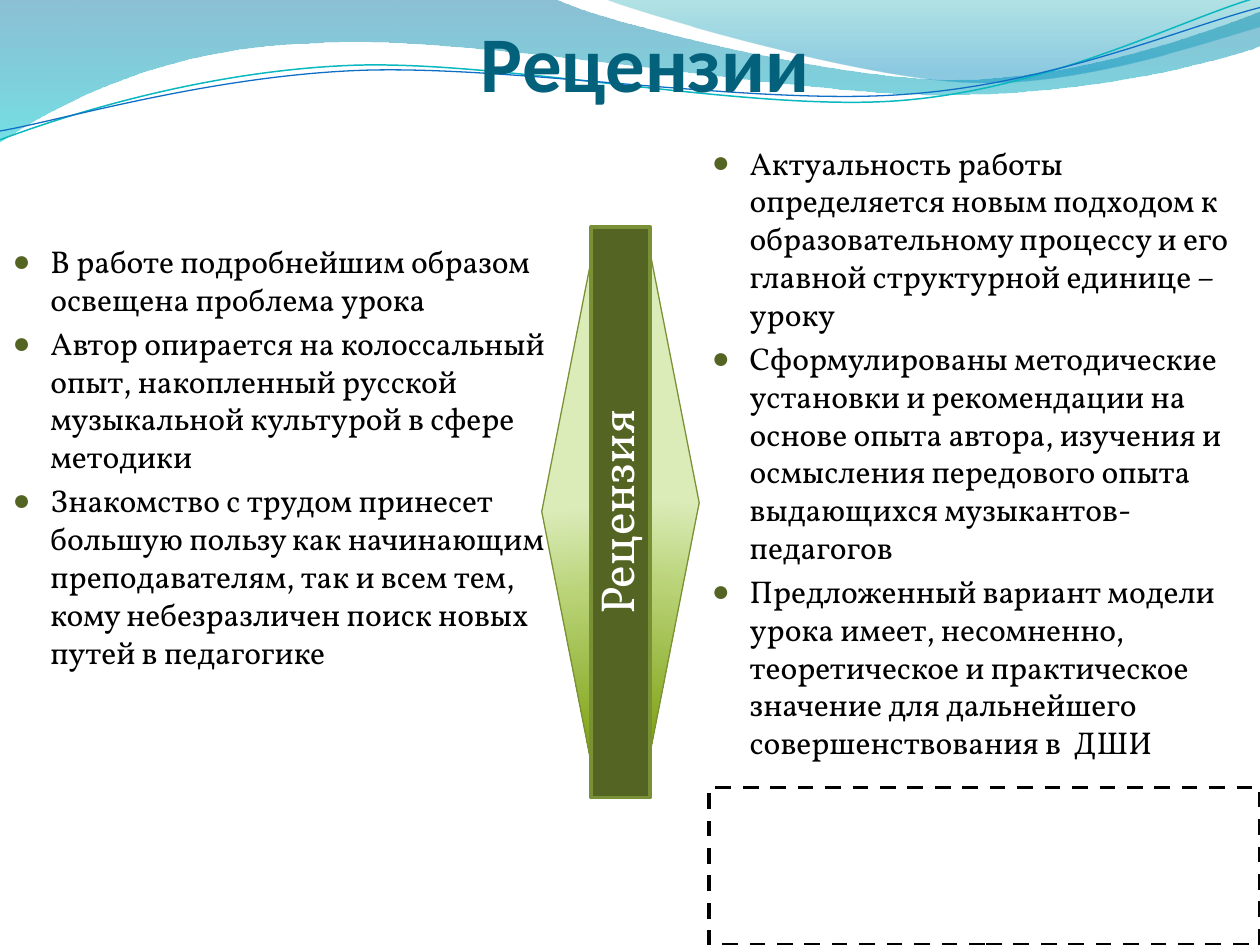
from typing import NamedTuple

from lxml import etree
from pptx import Presentation
from pptx.dml.color import RGBColor
from pptx.enum.dml import MSO_LINE
from pptx.enum.shapes import MSO_SHAPE
from pptx.enum.text import MSO_ANCHOR, MSO_AUTO_SIZE, PP_ALIGN
from pptx.oxml.ns import qn
from pptx.util import Inches, Pt

RECTANGLE, LEFT_ARROW = MSO_SHAPE.RECTANGLE, MSO_SHAPE.LEFT_ARROW
TOP, MIDDLE, BOTTOM = MSO_ANCHOR.TOP, MSO_ANCHOR.MIDDLE, MSO_ANCHOR.BOTTOM
LEFT, CENTER = PP_ALIGN.LEFT, PP_ALIGN.CENTER
NO_FIT, DASH = MSO_AUTO_SIZE.NONE, MSO_LINE.DASH

COLORS = {
    "title": "04617B", "text": "000000", "white": "FFFFFF",
    "olive": "546422", "olive_line": "7A9036", "arrow_line": "7B9135",
    "teal_line": "0AB8BF", "blue_line": "0F6FC6",
}


class Stop(NamedTuple):
    position: int
    color: str
    opacity: int = 100


class Wave(NamedTuple):
    """Each segment holds one point (a line) or three (a cubic curve)."""
    start: tuple
    segments: list
    stops: list = []
    line: str = ""
    weight: float = 0


class Arrow(NamedTuple):
    left: float
    top: float
    flipped: bool


class BulletList(NamedTuple):
    index: int
    left: float
    top: float
    items: list


WAVES = [
    Wave((0, 0), [
        [(4.4, -0.01)],
        [(4.76, 0.17), (6.64, 0.63), (7.58, 0.63)],
        [(8.53, 0.63), (9.58, 0.26), (10, 0.09)],
        [(10.01, 0.36)],
        [(9.83, 0.44), (8.7, 0.76), (7.46, 0.75)],
        [(6.22, 0.75), (3.82, 0.28), (2.57, 0.34)],
        [(1.29, 0.36), (0.46, 0.83), (-0.01, 1.13)],
        [(0, 0)],
    ], stops=[Stop(0, "0074A1", 45), Stop(100, "00C6CF", 55)]),
    Wave((4.79, -0.01), [
        [(5.09, 0.11), (6.82, 0.62), (7.69, 0.65)],
        [(8.56, 0.69), (9.61, 0.32), (10, 0.21)],
        [(10, 0)],
        [(4.79, -0.01)],
    ], stops=[Stop(0, "00A1A9", 30), Stop(80, "008BBF", 45)]),
    Wave((0, 1.11), [
        [(0.48, 0.93), (1.58, 0.57), (2.77, 0.52)],
        [(3.95, 0.47), (5.93, 0.89), (7.13, 0.8)],
        [(8.33, 0.71), (9.38, 0.15), (9.98, -0.02)],
    ], line="teal_line", weight=0.85),
    Wave((0, 1.04), [
        [(0.47, 0.96), (1.64, 0.61), (2.83, 0.56)],
        [(4.03, 0.51), (5.97, 0.84), (7.17, 0.75)],
        [(8.36, 0.67), (9.41, 0.21), (10, 0.06)],
    ], line="blue_line", weight=0.75),
]
ARROWS = [Arrow(4.69, 1.8, True), Arrow(4.3, 1.87, False)]
ARROW_STOPS = [Stop(0, "729800"), Stop(68, "B8D275"), Stop(100, "DBECB9")]
LISTS = [
    BulletList(2, 5.55, 1.09, [
        "Актуальность работы определяется новым подходом к образовательному процессу "
        "и его главной структурной единице – уроку",
        "Сформулированы методические установки и рекомендации на основе опыта автора, "
        "изучения и осмысления передового опыта выдающихся музыкантов-педагогов",
        "Предложенный вариант модели урока имеет, несомненно, теоретическое и "
        "практическое значение для дальнейшего совершенствования в  ДШИ",
    ]),
    BulletList(1, 0, 1.87, [
        "В работе подробнейшим образом освещена проблема урока",
        "Автор опирается на колоссальный опыт, накопленный русской музыкальной "
        "культурой в сфере методики",
        "Знакомство с трудом принесет большую пользу как начинающим преподавателям, "
        "так и всем тем, кому небезразличен поиск новых путей в педагогике",
    ]),
]


def rgb(name: str) -> RGBColor:
    return RGBColor.from_string(COLORS[name])


def add_element(parent, tag: str, **attributes):
    return etree.SubElement(parent, qn(tag), {k: str(v) for k, v in attributes.items()})


def add_color(parent, color: str, opacity: int = 100) -> None:
    element = add_element(parent, "a:srgbClr", val=color)
    if opacity < 100:
        add_element(element, "a:alpha", val=opacity * 1000)


def fill_gradient(shape, stops: list, radial: bool = False) -> None:
    shape.fill.background()
    plain = shape.element.spPr.find(qn("a:noFill"))
    gradient = etree.Element(qn("a:gradFill"), {"rotWithShape": "1"})
    stop_list = add_element(gradient, "a:gsLst")
    for stop in stops:
        add_color(add_element(stop_list, "a:gs", pos=stop.position * 1000),
                  stop.color, stop.opacity)
    if radial:
        circle = add_element(gradient, "a:path", path="circle")
        add_element(circle, "a:fillToRect", l=50000, t=130000, r=50000, b=-30000)
    else:
        add_element(gradient, "a:lin", ang=90 * 60000, scaled=0)
    plain.getparent().replace(plain, gradient)


def set_line(shape, color: str, weight: float) -> None:
    shape.line.color.rgb = rgb(color)
    shape.line.width = Pt(weight)


def place(box, left: float, top: float, width: float, height: float) -> None:
    box.left, box.top = Inches(left), Inches(top)
    box.width, box.height = Inches(width), Inches(height)


def bend_lines(shape, segments: list) -> None:
    """Turn the three lines through each curve's points into one cubic curve."""
    lines = iter(list(shape.element.iter(qn("a:lnTo"))))
    for segment in segments:
        parts = [next(lines) for _ in segment]
        if len(parts) == 3:
            curve = etree.Element(qn("a:cubicBezTo"))
            parts[0].addprevious(curve)
            for part in parts:
                curve.append(part[0])
                part.getparent().remove(part)


def draw_wave(page, wave: Wave) -> None:
    builder = page.shapes.build_freeform(Inches(wave.start[0]), Inches(wave.start[1]))
    points = [(Inches(x), Inches(y)) for segment in wave.segments for x, y in segment]
    builder.add_line_segments(points, close=bool(wave.stops))
    shape = builder.convert_to_shape()
    bend_lines(shape, wave.segments)
    shape.shadow.inherit = False
    if wave.stops:
        fill_gradient(shape, wave.stops)
        shape.line.fill.background()
    else:
        shape.fill.background()
        set_line(shape, wave.line, wave.weight)


def add_box(page, kind, left: float, top: float, width: float, height: float):
    box = page.shapes.add_shape(kind, *map(Inches, (left, top, width, height)))
    box.shadow.inherit = False
    return box


def draw_arrow(page, arrow: Arrow) -> None:
    shape = add_box(page, LEFT_ARROW, arrow.left, arrow.top, 0.86, 4.38)
    if arrow.flipped:
        shape.element.spPr.xfrm.set("flipH", "1")
    fill_gradient(shape, ARROW_STOPS, radial=True)
    set_line(shape, "arrow_line", 0.75)


def write_text(box, *texts: str, size: float, color: str, font: str = "Vollkorn",
               bold: bool = False, align=CENTER, anchor=MIDDLE, bullets: bool = False,
               spacing: float = 1.0) -> None:
    frame = box.text_frame
    frame.word_wrap, frame.auto_size, frame.vertical_anchor = True, NO_FIT, anchor
    for number, text in enumerate(texts):
        para = frame.add_paragraph() if number else frame.paragraphs[0]
        if bullets:
            properties = para._p.get_or_add_pPr()
            properties.set("marL", str(Inches(0.3)))
            properties.set("indent", str(Inches(-0.3)))
            add_color(add_element(properties, "a:buClr"), COLORS["olive"])
            add_element(properties, "a:buSzPct", val=95000)
            add_element(properties, "a:buChar", char="●")
        para.alignment, para.line_spacing = align, spacing
        para.space_before = Pt(size * 0.2 if number else 0)
        span = para.add_run()
        span.text = text
        span.font.size, span.font.name, span.font.bold = Pt(size), font, bold
        span.font.color.rgb = rgb(color)


def main() -> None:
    deck = Presentation()
    deck.slide_width, deck.slide_height = Inches(10), Inches(7.5)
    page = deck.slides.add_slide(deck.slide_layouts[3])
    tree = page.shapes.element

    # Waves and arrows lie behind the text
    for wave in WAVES:
        draw_wave(page, wave)
    for arrow in ARROWS:
        draw_arrow(page, arrow)

    # Title
    title = page.shapes.title
    tree.append(title.element)
    place(title, 0.62, 0.16, 9, 0.7)
    frame = title.text_frame
    frame.margin_left = frame.margin_right = frame.margin_bottom = 0
    write_text(title, "Рецензии", size=45, color="title", font="Calibri", bold=True,
               anchor=BOTTOM)

    # Lists on both sides
    for block in LISTS:
        box = page.placeholders[block.index]
        tree.append(box.element)
        place(box, block.left, block.top, 4.45, 5)
        write_text(box, *block.items, size=18, color="text", align=LEFT, anchor=TOP,
                   bullets=True)

    # Upright label between the arrows
    label = add_box(page, RECTANGLE, 2.66, 3.83, 4.53, 0.47)
    label.rotation = 270
    label.fill.solid()
    label.fill.fore_color.rgb = rgb("olive")
    set_line(label, "olive_line", 2)
    write_text(label, "Рецензия", size=27.2, color="white", spacing=0.8)

    # Dashed frame
    dashed = add_box(page, RECTANGLE, 5.63, 6.25, 4.37, 1.25)
    dashed.fill.background()
    set_line(dashed, "text", 2.25)
    dashed.line.dash_style = DASH

    deck.save("out.pptx")


if __name__ == "__main__":
    main()
